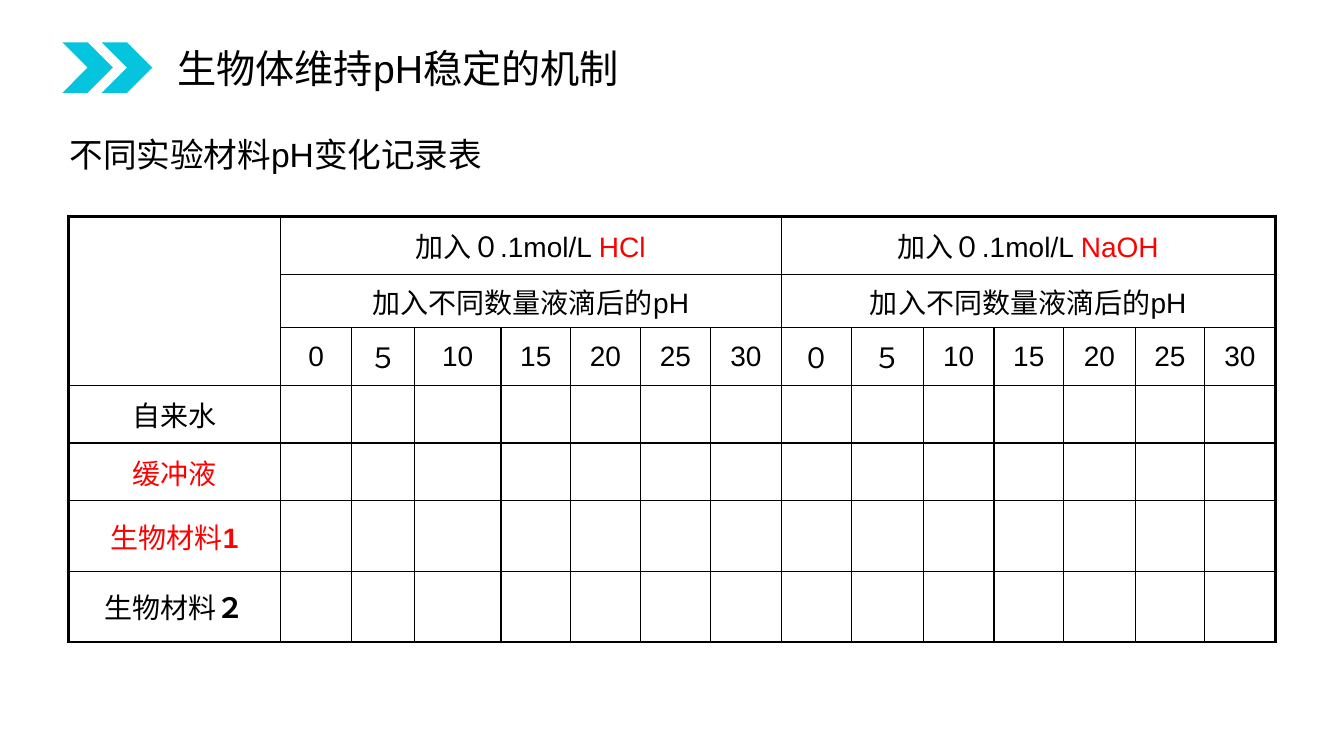
from lxml.etree import SubElement
from pptx import Presentation
from pptx.dml.color import RGBColor
from pptx.enum.shapes import MSO_SHAPE as Shape
from pptx.enum.text import MSO_ANCHOR as Anchor, PP_ALIGN as Align
from pptx.oxml import parse_xml
from pptx.oxml.ns import nsdecls, qn
from pptx.util import Inches, Pt

WIDTH, HEIGHT = Inches(13.33), Inches(7.5)
COLORS = {"accent": "04C4DE", "ink": "000000", "key": "FF0000"}
THIN, THICK = 1, 2.25

# Table content: each text is a list of (words, colour, bold) runs
REAGENTS = ["HCl", "NaOH"]
DROPS = [["0", "５", "10", "15", "20", "25", "30"],
         ["０", "５", "10", "15", "20", "25", "30"]]
MATERIALS = [
    [("自来水", "ink", False)],
    [("缓冲液", "key", False)],
    [("生物材料", "key", False), ("1", "key", True)],
    [("生物材料", "ink", False), ("２", "ink", True)],
]
COLUMN_SHARES = [2.1, 0.71, 0.62, 0.86, 0.69, 0.69, 0.7, 0.7,
                 0.7, 0.71, 0.7, 0.69, 0.71, 0.69, 0.7]
ROW_SHARES = [0.57, 0.53, 0.57, 0.57, 0.57, 0.7, 0.7]
HEAD_ROWS = 3


def percent_box(left, top, width, height):
    """Turn percentages of the slide into a box of lengths."""
    return (int(WIDTH * left / 100), int(HEIGHT * top / 100),
            int(WIDTH * width / 100), int(HEIGHT * height / 100))


def write_runs(frame, runs, size, **paragraph_format):
    paragraph = frame.paragraphs[0]
    for name, value in paragraph_format.items():
        setattr(paragraph, name, value)
    for words, color, bold in runs:
        run = paragraph.add_run()
        run.text = words
        for name, value in {"name": "Arial", "size": Pt(size), "bold": bold}.items():
            setattr(run.font, name, value)
        run.font.color.rgb = RGBColor.from_string(COLORS[color])


def add_line_of_text(slide, box, words, size, **paragraph_format):
    frame = slide.shapes.add_textbox(*box).text_frame
    frame.word_wrap = True
    write_runs(frame, [(words, "ink", False)], size, **paragraph_format)


def add_heading(slide, box):
    left, top, width, height = box
    # Twin chevrons
    for index in range(2):
        chevron = slide.shapes.add_shape(
            Shape.CHEVRON, left + int(index * 0.78 * height), top, height, height)
        chevron.shadow.inherit = False
        chevron.fill.solid()
        chevron.fill.fore_color.rgb = RGBColor.from_string(COLORS["accent"])
        chevron.line.fill.background()
    # Title beside them
    indent = int(2.08 * height)
    title_box = (left + indent, top + int(0.04 * height),
                 width - indent, int(0.92 * height))
    add_line_of_text(slide, title_box, "生物体维持pH稳定的机制", 28,
                     line_spacing=0.9, space_before=Pt(10))


def draw_borders(cell, edges):
    properties = cell._tc.get_or_add_tcPr()
    for index, (side, weight) in enumerate(edges.items()):
        line = parse_xml(f'<a:ln{side} {nsdecls("a")} w="{int(Pt(weight))}"/>')
        fill = SubElement(line, qn("a:solidFill"))
        SubElement(fill, qn("a:srgbClr"), val=COLORS["ink"])
        properties.insert(index, line)


def fill_cell(cell, runs):
    cell_format = {
        "vertical_anchor": Anchor.MIDDLE,
        "margin_left": Inches(0.13), "margin_right": Inches(0.13),
        "margin_top": 0, "margin_bottom": 0,
    }
    for name, value in cell_format.items():
        setattr(cell, name, value)
    write_runs(cell.text_frame, runs, 20, alignment=Align.CENTER, space_before=Pt(4))


def add_record_table(slide, box):
    row_count, column_count = len(ROW_SHARES), len(COLUMN_SHARES)
    table = slide.shapes.add_table(row_count, column_count, *box).table
    table.first_row = table.horz_banding = False
    for column, share in zip(table.columns, COLUMN_SHARES):
        column.width = int(box[2] * share / sum(COLUMN_SHARES))
    for row, share in zip(table.rows, ROW_SHARES):
        row.height = int(box[3] * share / sum(ROW_SHARES))

    # Header: one group of drop counts for each reagent
    table.cell(0, 0).merge(table.cell(HEAD_ROWS - 1, 0))
    for group, (reagent, drops) in enumerate(zip(REAGENTS, DROPS)):
        first = 1 + group * len(drops)
        titles = [[("加入０.1mol/L ", "ink", False), (reagent, "key", False)],
                  [("加入不同数量液滴后的pH", "ink", False)]]
        for r, runs in enumerate(titles):
            table.cell(r, first).merge(table.cell(r, first + len(drops) - 1))
            fill_cell(table.cell(r, first), runs)
        for c, count in enumerate(drops, first):
            fill_cell(table.cell(HEAD_ROWS - 1, c), [(count, "ink", False)])

    # Material names
    for r, runs in enumerate(MATERIALS, HEAD_ROWS):
        fill_cell(table.cell(r, 0), runs)

    # Thin grid inside a thick frame
    for r in range(row_count):
        for c in range(column_count):
            cell = table.cell(r, c)
            cell.fill.background()
            if cell.is_spanned:
                continue
            right = c + (cell.span_width if cell.is_merge_origin else 1)
            bottom = r + (cell.span_height if cell.is_merge_origin else 1)
            on_frame = {"L": c == 0, "R": right == column_count,
                        "T": r == 0, "B": bottom == row_count}
            draw_borders(cell, {side: THICK if outer else THIN
                                for side, outer in on_frame.items()})


def main():
    deck = Presentation()
    deck.slide_width, deck.slide_height = WIDTH, HEIGHT
    slide = deck.slides.add_slide(deck.slide_layouts[6])
    add_heading(slide, percent_box(4.65, 5.6, 49.74, 6.67))
    add_record_table(slide, percent_box(5.1, 28.67, 89.8, 56.27))
    # Table caption
    add_line_of_text(slide, percent_box(4.43, 17.07, 67.67, 6.67),
                     "不同实验材料pH变化记录表", 24, space_before=Pt(12))
    deck.save("out.pptx")


if __name__ == "__main__":
    main()
